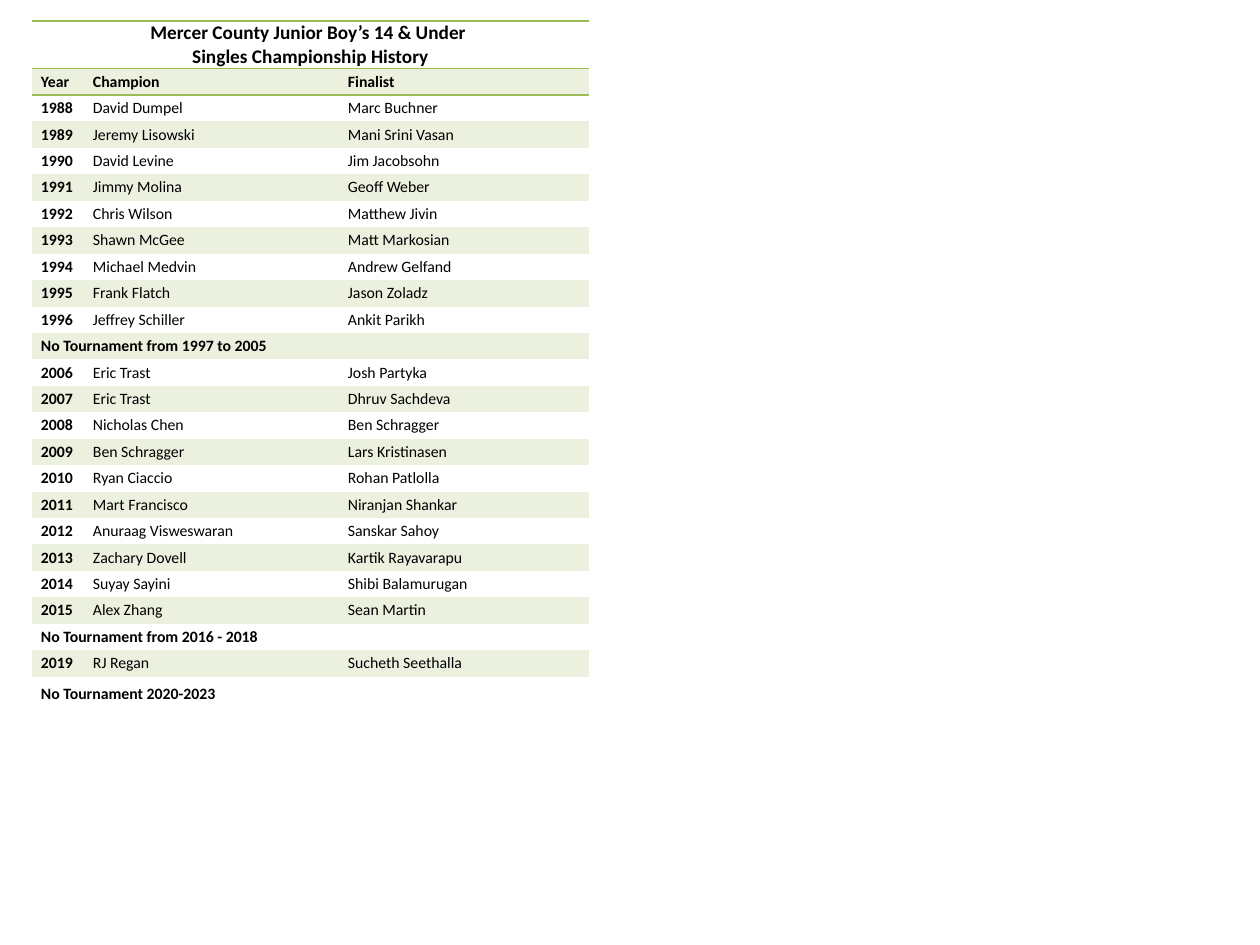
from dataclasses import dataclass

from lxml import etree
from pptx import Presentation
from pptx import util as u
from pptx.dml import color
from pptx.enum import text
from pptx.oxml import ns

SCALE = 914400 / 126


@dataclass(frozen=True)
class Theme:
    font: str = "Calibri"
    ink: str = "000000"
    rule: str = "9BBB59"
    stripe: str = "EBF1DE"
    title_size: int = 11
    body_size: int = 9
    rule_width: int = 1


@dataclass(frozen=True)
class Box:
    left: int
    top: int
    width: int
    height: int


THEME = Theme()
NO_STYLE = "{2D5ABB26-0587-4C30-8999-92F81FD0307C}"
TITLE_HEIGHT = 47
YEAR_WIDTH, CHAMPION_WIDTH = 52, 255
CELL_INSET = 9

TITLE = ["Mercer County Junior Boy’s 14 & Under ", "Singles Championship History"]
RESULTS = [
    ("Year", "Champion", "Finalist"),
    ("1988", "David Dumpel", "Marc Buchner"),
    ("1989", "Jeremy Lisowski", "Mani Srini Vasan"),
    ("1990", "David Levine", "Jim Jacobsohn"),
    ("1991", "Jimmy Molina", "Geoff Weber"),
    ("1992", "Chris Wilson", "Matthew Jivin"),
    ("1993", "Shawn McGee", "Matt Markosian"),
    ("1994", "Michael Medvin", "Andrew Gelfand"),
    ("1995", "Frank Flatch", "Jason Zoladz"),
    ("1996", "Jeffrey Schiller", "Ankit Parikh"),
    ("No Tournament from 1997 to 2005",),
    ("2006", "Eric Trast", "Josh Partyka"),
    ("2007", "Eric Trast", "Dhruv Sachdeva"),
    ("2008", "Nicholas Chen", "Ben Schragger"),
    ("2009", "Ben Schragger", "Lars Kristinasen"),
    ("2010", "Ryan Ciaccio", "Rohan Patlolla"),
    ("2011", "Mart Francisco", "Niranjan Shankar"),
    ("2012", "Anuraag Visweswaran", "Sanskar Sahoy"),
    ("2013", "Zachary Dovell", "Kartik Rayavarapu"),
    ("2014", "Suyay Sayini", "Shibi Balamurugan"),
    ("2015", "Alex Zhang", "Sean Martin"),
    ("No Tournament from 2016 - 2018",),
    ("2019", "RJ Regan", "Sucheth Seethalla"),
    ("No Tournament 2020-2023", ""),
]


def px(length):
    return u.Emu(round(length * SCALE))


def write_cell(cell, lines, size, bold, alignment=text.PP_ALIGN.LEFT):
    cell.vertical_anchor = text.MSO_ANCHOR.MIDDLE
    cell.margin_left = cell.margin_right = px(CELL_INSET)
    cell.margin_top = cell.margin_bottom = 0
    paragraph = cell.text_frame.paragraphs[0]
    paragraph.alignment = alignment
    for number, line in enumerate(lines):
        if number:
            paragraph.add_line_break()
        run = paragraph.add_run()
        run.text = line
        run.font.name = THEME.font
        run.font.size = u.Pt(size)
        run.font.bold = bold
        run.font.color.rgb = color.RGBColor.from_string(THEME.ink)


def fill_cell(cell, striped):
    if striped:
        cell.fill.solid()
        cell.fill.fore_color.rgb = color.RGBColor.from_string(THEME.stripe)
    else:
        cell.fill.background()


def rule_cell(cell, sides):
    properties = cell._tc.get_or_add_tcPr()
    for position, side in enumerate(sides):
        line = etree.Element(ns.qn(f"a:ln{side}"), w=str(u.Pt(THEME.rule_width)))
        solid = etree.SubElement(line, ns.qn("a:solidFill"))
        etree.SubElement(solid, ns.qn("a:srgbClr"), val=THEME.rule)
        properties.insert(position, line)


def add_title_row(table):
    cells = [table.cell(0, column) for column in range(3)]
    cells[0].merge(cells[2])
    write_cell(cells[0], TITLE, THEME.title_size, True, text.PP_ALIGN.CENTER)
    for cell in cells:
        fill_cell(cell, False)
        rule_cell(cell, "TB")


def add_result_row(table, index, values):
    cells = [table.cell(index + 1, column) for column in range(3)]
    span = 4 - len(values)
    if span > 1:
        cells[0].merge(cells[span - 1])
    for column, cell in enumerate(cells):
        fill_cell(cell, index % 2 == 0)
        if index == 0:
            rule_cell(cell, "T")
        value_index = max(0, column - span + 1)
        if column == 0 or column >= span:
            bold = column == 0 or index == 0
            write_cell(cell, [values[value_index]], THEME.body_size, bold)


def add_history_table(slide, box):
    frame = slide.shapes.add_table(
        len(RESULTS) + 1, 3, px(box.left), px(box.top), px(box.width), px(box.height)
    )
    table = frame.table
    table.first_row = table.horz_banding = False
    next(frame.element.iter(ns.qn("a:tableStyleId"))).text = NO_STYLE
    widths = (YEAR_WIDTH, CHAMPION_WIDTH, box.width - YEAR_WIDTH - CHAMPION_WIDTH)
    for column, width in zip(table.columns, widths):
        column.width = px(width)
    row_height = px((box.height - TITLE_HEIGHT) / len(RESULTS))
    for index, row in enumerate(table.rows):
        row.height = row_height if index else px(TITLE_HEIGHT)
    add_title_row(table)
    for index, values in enumerate(RESULTS):
        add_result_row(table, index, values)


def main():
    presentation = Presentation()
    presentation.slide_width, presentation.slide_height = px(1260), px(945)
    slide = presentation.slides.add_slide(presentation.slide_layouts[6])
    add_history_table(slide, Box(32, 21, 557, 682))
    presentation.save("out.pptx")


if __name__ == "__main__":
    main()
